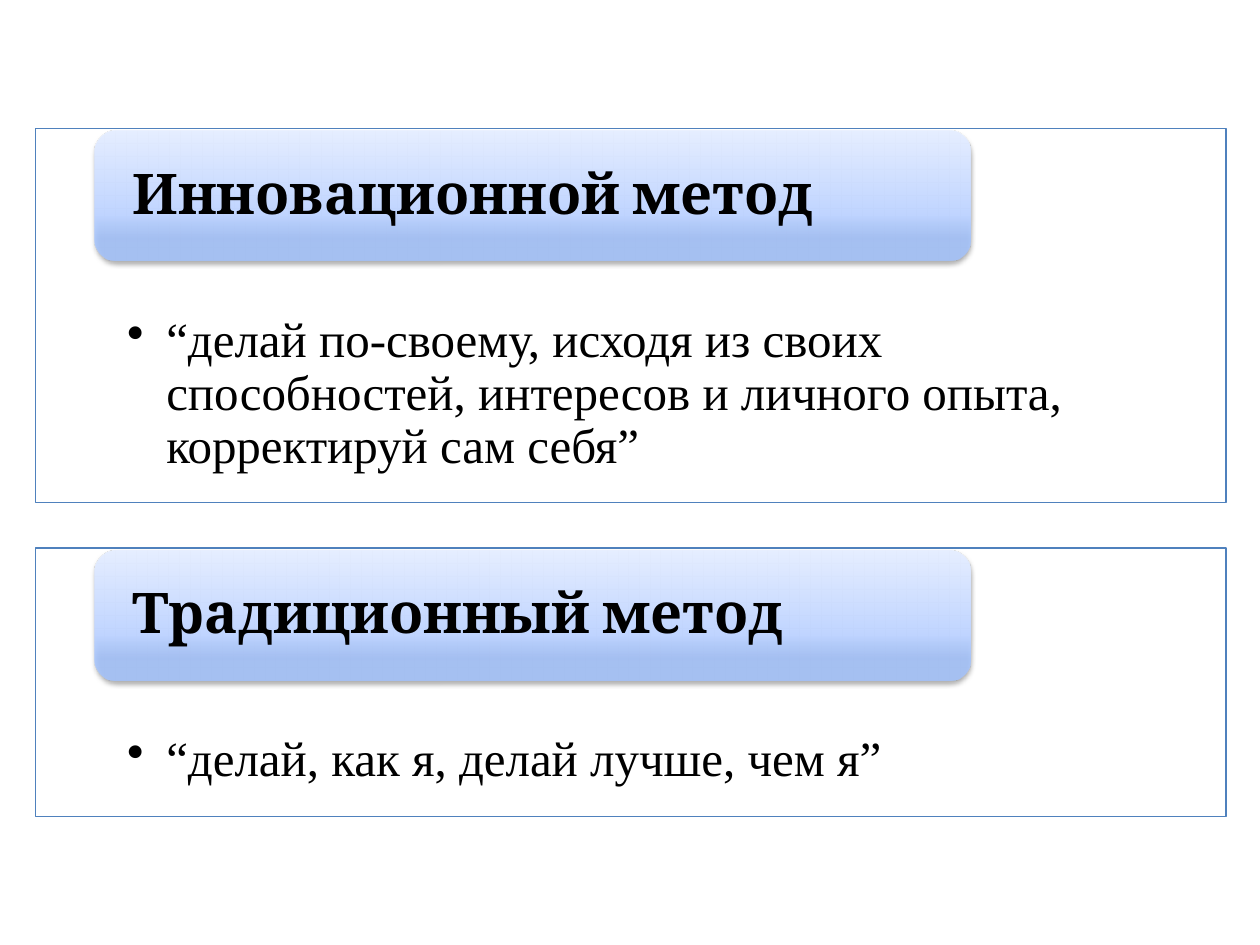
from pptx import Presentation
from pptx.dml.color import RGBColor
from pptx.enum.shapes import MSO_SHAPE
from pptx.enum.text import MSO_ANCHOR, PP_ALIGN
from pptx.oxml import parse_xml
from pptx.oxml.ns import nsdecls, qn
from pptx.util import Inches, Pt

RECT, ROUND = MSO_SHAPE.RECTANGLE, MSO_SHAPE.ROUNDED_RECTANGLE
TOP, MIDDLE = MSO_ANCHOR.TOP, MSO_ANCHOR.MIDDLE
LEFT = PP_ALIGN.LEFT

BLACK = RGBColor(0x00, 0x00, 0x00)
WHITE = RGBColor(0xFF, 0xFF, 0xFF)
BLUE = RGBColor(0x4F, 0x81, 0xBD)
DEEP = RGBColor(0xA4, 0xC4, 0xFF)
MID = RGBColor(0xBF, 0xD4, 0xFF)
PALE = RGBColor(0xE6, 0xEE, 0xFF)

# Position in percent, colour, opacity in percent
STOPS = [(17, DEEP, 83), (35, MID, 100), (100, PALE, 100)]

# Top, height, title, text
METHODS = [
    (1.02, 2.97, "Инновационной метод",
     "“делай по-своему, исходя из своих способностей, интересов "
     "и личного опыта, корректируй сам себя”"),
    (4.35, 2.13, "Традиционный метод", "“делай, как я, делай лучше, чем я”"),
]


def add_box(slide, kind, left, top, width, height):
    box = slide.shapes.add_shape(
        kind, Inches(left), Inches(top), Inches(width), Inches(height))
    box.shadow.inherit = False
    return box


def set_frame(box, anchor, left, top, right, bottom):
    """Set anchor and insets, and return the first paragraph."""
    frame = box.text_frame
    frame.word_wrap = True
    frame.vertical_anchor = anchor
    frame.margin_left, frame.margin_top = Inches(left), Inches(top)
    frame.margin_right, frame.margin_bottom = Inches(right), Inches(bottom)
    para = frame.paragraphs[0]
    para.alignment = LEFT
    para.line_spacing = 0.9
    return para


def add_run(para, text, size, face, bold=False):
    run = para.add_run()
    run.text = text
    run.font.size = Pt(size)
    run.font.name = face
    run.font.bold = bold
    run.font.color.rgb = BLACK


def add_bullet(para, indent):
    props = para._p.get_or_add_pPr()
    props.set("marL", str(Inches(indent)))
    props.set("indent", str(-Inches(indent)))
    props.append(parse_xml(f'<a:buChar {nsdecls("a")} char="•"/>'))


def fill_fade(box):
    """Fill with a gradient that runs from bottom to top."""
    stops = "".join(
        f'<a:gs pos="{pos * 1000}"><a:srgbClr val="{color}">'
        f'<a:alpha val="{alpha * 1000}"/></a:srgbClr></a:gs>'
        for pos, color, alpha in STOPS)
    fade = parse_xml(
        f'<a:gradFill {nsdecls("a")} rotWithShape="1"><a:gsLst>{stops}</a:gsLst>'
        '<a:lin ang="16200000" scaled="0"/></a:gradFill>')
    box._element.spPr.find(qn("a:prstGeom")).addnext(fade)


def add_shadow(box):
    box._element.spPr.find(qn("a:effectLst")).append(parse_xml(
        f'<a:outerShdw {nsdecls("a")} blurRad="{Pt(3.1)}" dist="{Pt(1.6)}" '
        'dir="5400000" rotWithShape="0"><a:srgbClr val="000000">'
        '<a:alpha val="38000"/></a:srgbClr></a:outerShdw>'))


def add_panel(slide, top, height, text):
    box = add_box(slide, RECT, 0.28, top, 9.45, height)
    box.fill.solid()
    box.fill.fore_color.rgb = WHITE
    color = box._element.spPr.find(qn("a:solidFill"))[0]
    color.append(parse_xml(f'<a:alpha {nsdecls("a")} val="83000"/>'))
    box.line.color.rgb = BLUE
    box.line.width = Pt(0.75)
    para = set_frame(box, TOP, 0.73, 1.48, 0.73, 0.22)
    para.level = 1
    add_bullet(para, 0.31)
    add_run(para, text, 28, "Times New Roman")


def add_title(slide, top, text):
    box = add_box(slide, ROUND, 0.75, top, 6.95, 1.03)
    box.line.fill.background()
    fill_fade(box)
    add_shadow(box)
    para = set_frame(box, MIDDLE, 0.25, 0, 0.25, 0)
    add_run(para, text, 32, "Cambria", bold=True)


def main():
    deck = Presentation()
    deck.slide_width, deck.slide_height = Inches(10), Inches(7.5)
    slide = deck.slides.add_slide(deck.slide_layouts[6])
    for top, height, title, text in METHODS:
        add_panel(slide, top, height, text)
        add_title(slide, top + 0.02, title)
    deck.save("out.pptx")


if __name__ == "__main__":
    main()
